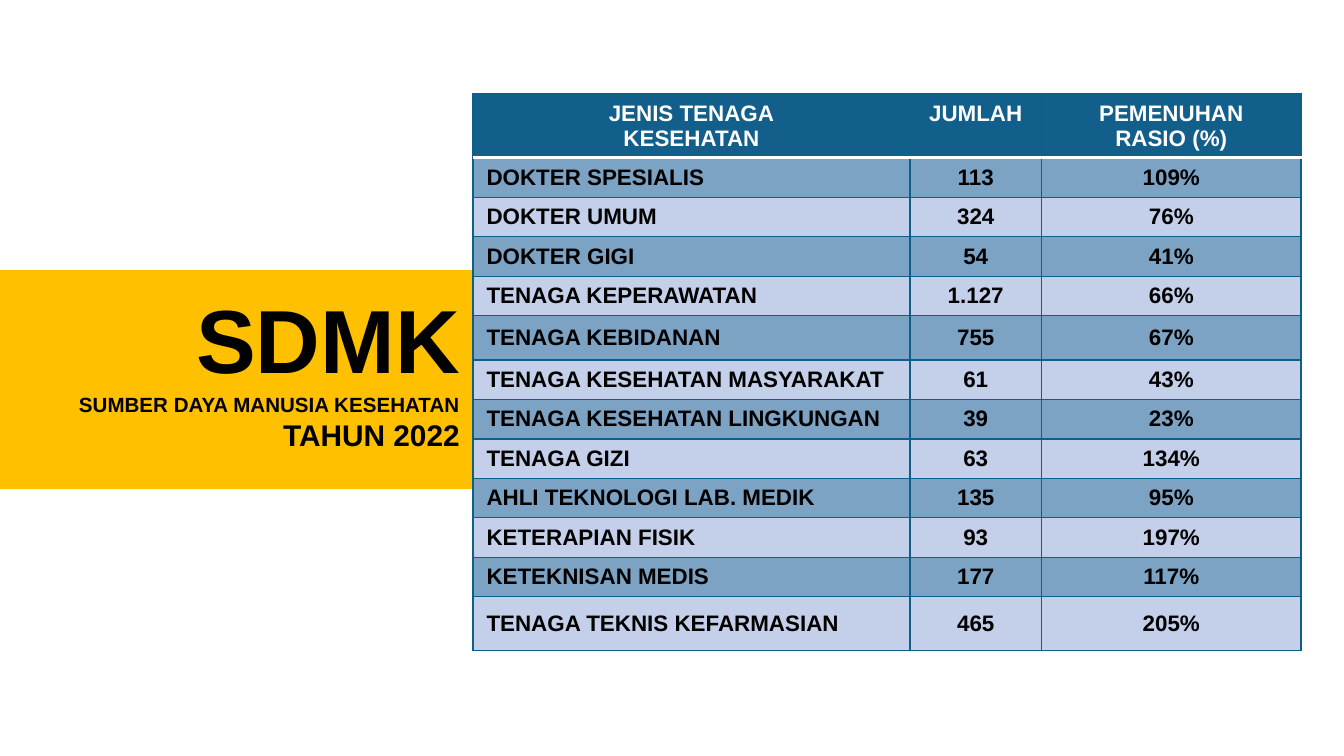
from lxml.etree import SubElement
from pptx import Presentation
from pptx.dml.color import RGBColor
from pptx.enum.shapes import MSO_SHAPE as SHAPE
from pptx.enum.text import MSO_ANCHOR as ANCHOR, PP_ALIGN as ALIGN
from pptx.oxml.ns import qn
from pptx.util import Inches, Pt

BLUE, PALE, MID, EDGE = "115F8A", "C4D0EA", "7DA3C4", "0E5E8A"
SPLIT = 3.52
COLS = [3.25, 0.98, 1.93]
TABLE, HEAD = 4.14, 0.47
TALL = {5: 0.33, 12: 0.4}
ROWS = [
    ("JENIS TENAGA\vKESEHATAN", "JUMLAH", "PEMENUHAN\vRASIO (%)"),
    ("DOKTER SPESIALIS", "113", "109%"),
    ("DOKTER UMUM", "324", "76%"),
    ("DOKTER GIGI", "54", "41%"),
    ("TENAGA KEPERAWATAN", "1.127", "66%"),
    ("TENAGA KEBIDANAN", "755", "67%"),
    ("TENAGA KESEHATAN MASYARAKAT", "61", "43%"),
    ("TENAGA KESEHATAN LINGKUNGAN", "39", "23%"),
    ("TENAGA GIZI", "63", "134%"),
    ("AHLI TEKNOLOGI LAB. MEDIK", "135", "95%"),
    ("KETERAPIAN FISIK", "93", "197%"),
    ("KETEKNISAN MEDIS", "177", "117%"),
    ("TENAGA TEKNIS KEFARMASIAN", "465", "205%"),
]


def style(font, size, color):
    for key, val in {"name": "Arial", "bold": True, "size": Pt(size)}.items():
        setattr(font, key, val)
    font.color.rgb = RGBColor.from_string(color)


def border(cell, side, color, width):
    """Draw one cell edge; call before the cell's fill is set."""
    line = SubElement(cell._tc.get_or_add_tcPr(), qn("a:ln" + side),
                      w=str(Pt(width)))
    fill = SubElement(line, qn("a:solidFill"))
    SubElement(fill, qn("a:srgbClr"), val=color)


prs = Presentation()
prs.slide_width = Inches(10)
prs.slide_height = prs.slide_width * 9 // 16
slide = prs.slides.add_slide(prs.slide_layouts[6])

# Title band
band = slide.shapes.add_shape(SHAPE.RECTANGLE, 0, Inches(2.01),
                              Inches(SPLIT), Inches(1.63))
band.shadow.inherit = False
band.fill.solid()
band.fill.fore_color.rgb = RGBColor.from_string("FFC000")
band.line.fill.background()
frame = band.text_frame
gap = Inches(0.1)
for key, val in {"word_wrap": True, "vertical_anchor": ANCHOR.MIDDLE,
                 "margin_left": gap, "margin_right": gap,
                 "margin_top": gap, "margin_bottom": Inches(0.27)}.items():
    setattr(frame, key, val)
para = frame.paragraphs[0]
para.alignment = ALIGN.RIGHT
for n, (text, size) in enumerate([("SDMK", 48),
                                  ("SUMBER DAYA MANUSIA KESEHATAN", 11),
                                  ("TAHUN 2022", 16)]):
    if n:
        para.add_line_break()
    run = para.add_run()
    run.text = text
    style(run.font, size, "000000")

# Staff table: rows of equal height share what the header and tall rows leave
plain = (TABLE - HEAD - sum(TALL.values())) / (len(ROWS) - 1 - len(TALL))
highs = [HEAD] + [TALL.get(r, plain) for r in range(1, len(ROWS))]
table = slide.shapes.add_table(len(ROWS), len(COLS), Inches(SPLIT), Inches(0.7),
                               Inches(sum(COLS)), Inches(TABLE)).table
for col, wide in zip(table.columns, COLS):
    col.width = Inches(wide)
for r, (row, high) in enumerate(zip(ROWS, highs)):
    table.rows[r].height = Inches(high)
    for c, text in enumerate(row):
        cell = table.cell(r, c)
        cell.text = text
        cell.vertical_anchor = ANCHOR.MIDDLE if r else ANCHOR.TOP
        para = cell.text_frame.paragraphs[0]
        para.alignment = ALIGN.LEFT if r and c == 0 else ALIGN.CENTER
        for run in para.runs:
            style(run.font, 12, "000000" if r else "FFFFFF")
        for side in "LRTB":
            white = (r, side) in [(0, "B"), (1, "T")]
            border(cell, side, *(("FFFFFF", 2) if white else (EDGE, 0.75)))
        cell.fill.solid()
        shade = (MID if r % 2 else PALE) if r else BLUE
        cell.fill.fore_color.rgb = RGBColor.from_string(shade)

prs.save("out.pptx")
